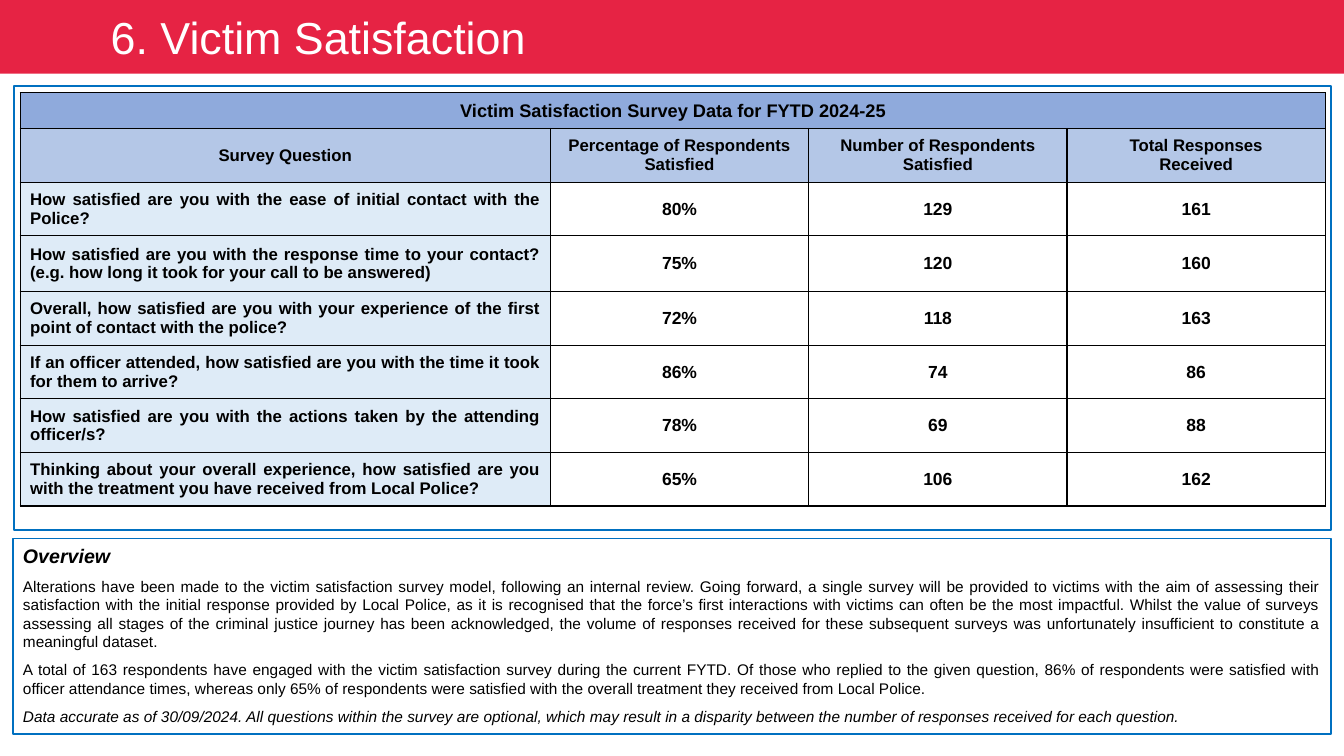
from pptx import Presentation
from pptx.dml.color import RGBColor
from pptx.enum.shapes import MSO_SHAPE
from pptx.enum.text import MSO_ANCHOR, PP_ALIGN
from pptx.oxml import parse_xml
from pptx.oxml.ns import nsdecls
from pptx.util import Cm, Pt

RECT = MSO_SHAPE.RECTANGLE
TOP, MIDDLE = MSO_ANCHOR.TOP, MSO_ANCHOR.MIDDLE
LEFT, CENTER, JUSTIFY = PP_ALIGN.LEFT, PP_ALIGN.CENTER, PP_ALIGN.JUSTIFY
COLORS = {
    "banner": "E62344", "frame": "0070C0", "title_row": "8FAADC",
    "header_row": "B4C7E7", "question": "DEEBF7", "text": "000000",
    "white": "FFFFFF",
}


def add_box(left, top, width, height, fill=None, line=None):
    sp = s.shapes.add_shape(RECT, Cm(left), Cm(top), Cm(width), Cm(height))
    sp.shadow.inherit = False
    if fill:
        sp.fill.solid()
        sp.fill.fore_color.rgb = RGBColor.from_string(COLORS[fill])
    else:
        sp.fill.background()
    if line:
        sp.line.color.rgb = RGBColor.from_string(COLORS[line])
        sp.line.width = Pt(1.25)
    else:
        sp.line.fill.background()
    return sp


def write(p, text, size, align, bold=False, italic=False, color="text"):
    p.text = text
    p.alignment = align
    for r in p.runs:
        r.font.name = "Arial"
        r.font.size = Pt(size)
        r.font.bold = bold
        r.font.italic = italic
        r.font.color.rgb = RGBColor.from_string(COLORS[color])


prs = Presentation()
prs.slide_width, prs.slide_height = Cm(33.87), Cm(19.05)
s = prs.slides.add_slide(prs.slide_layouts[6])

# Survey table
rows = [
    ("Victim Satisfaction Survey Data for FYTD 2024-25", "", "", ""),
    ("Survey Question", "Percentage of Respondents Satisfied",
     "Number of Respondents Satisfied", "Total Responses\vReceived"),
    ("How satisfied are you with the ease of initial contact with the Police?",
     "80%", "129", "161"),
    ("How satisfied are you with the response time to your contact? "
     "(e.g. how long it took for your call to be answered)",
     "75%", "120", "160"),
    ("Overall, how satisfied are you with your experience of the first "
     "point of contact with the police?", "72%", "118", "163"),
    ("If an officer attended, how satisfied are you with the time it took "
     "for them to arrive?", "86%", "74", "86"),
    ("How satisfied are you with the actions taken by the attending officer/s?",
     "78%", "69", "88"),
    ("Thinking about your overall experience, how satisfied are you with "
     "the treatment you have received from Local Police?",
     "65%", "106", "162"),
]
col_widths = [13.36, 6.51, 6.51, 6.51]
row_heights = [0.9, 1.35, 1.35, 1.41] + [1.35] * 4

table = s.shapes.add_table(len(rows), len(col_widths), Cm(0.51), Cm(2.34),
                           Cm(sum(col_widths)), Cm(sum(row_heights))).table
table.first_row = table.horz_banding = False
for col, width in zip(table.columns, col_widths):
    col.width = Cm(width)
for row, height in zip(table.rows, row_heights):
    row.height = Cm(height)
table.cell(0, 0).merge(table.cell(0, 3))

for i, row in enumerate(rows):
    for j, text in enumerate(row):
        # Style by row and column role
        fill, size, align = None, 12.5, CENTER
        if i == 0:
            fill, size = "title_row", 13
        elif i == 1:
            fill, size = "header_row", 12
        elif j == 0:
            fill, size, align = "question", 12, JUSTIFY

        cell = table.cell(i, j)
        cell.vertical_anchor = MIDDLE
        cell.margin_left = cell.margin_right = Cm(0.1 if i == 1 and j else 0.25)
        cell.margin_top = cell.margin_bottom = Cm(0.19)
        if text:
            write(cell.text_frame.paragraphs[0], text, size, align, bold=True)

        # Borders go before the fill
        for side in ("lnL", "lnR", "lnT", "lnB"):
            cell._tc.get_or_add_tcPr().append(parse_xml(
                f'<a:{side} {nsdecls("a")} w="12700"><a:solidFill>'
                f'<a:srgbClr val="{COLORS["text"]}"/></a:solidFill></a:{side}>'))
        if fill:
            cell.fill.solid()
            cell.fill.fore_color.rgb = RGBColor.from_string(COLORS[fill])
        else:
            cell.fill.background()

# Frame around the table
add_box(0.35, 2.16, 33.2, 11.2, line="frame")

# Title banner
tf = add_box(0, 0, 33.87, 1.86, fill="banner").text_frame
tf.word_wrap = True
tf.vertical_anchor = MIDDLE
tf.margin_left = Cm(2.79)
write(tf.paragraphs[0], "6. Victim Satisfaction", 32, LEFT, color="white")

# Overview box
overview = [
    ("Overview", 14, LEFT, True, True),
    ("Alterations have been made to the victim satisfaction survey model, "
     "following an internal review. Going forward, a single survey will be "
     "provided to victims with the aim of assessing their satisfaction with "
     "the initial response provided by Local Police, as it is recognised that "
     "the force’s first interactions with victims can often be the most "
     "impactful. Whilst the value of surveys assessing all stages of the "
     "criminal justice journey has been acknowledged, the volume of responses "
     "received for these subsequent surveys was unfortunately insufficient to "
     "constitute a meaningful dataset.", 11, JUSTIFY, False, False),
    ("A total of 163 respondents have engaged with the victim satisfaction "
     "survey during the current FYTD. Of those who replied to the given "
     "question, 86% of respondents were satisfied with officer attendance "
     "times, whereas only 65% of respondents were satisfied with the overall "
     "treatment they received from Local Police.", 11, JUSTIFY, False, False),
    ("Data accurate as of 30/09/2024. All questions within the survey are "
     "optional, which may result in a disparity between the number of "
     "responses received for each question.", 11, JUSTIFY, False, True),
]
tf = add_box(0.33, 13.57, 33.22, 4.93, line="frame").text_frame
tf.word_wrap = True
tf.vertical_anchor = TOP
for i, (text, size, align, bold, italic) in enumerate(overview):
    p = tf.add_paragraph() if i else tf.paragraphs[0]
    p.space_before = Pt(7 if i else 0)
    write(p, text, size, align, bold, italic)

prs.save("out.pptx")
